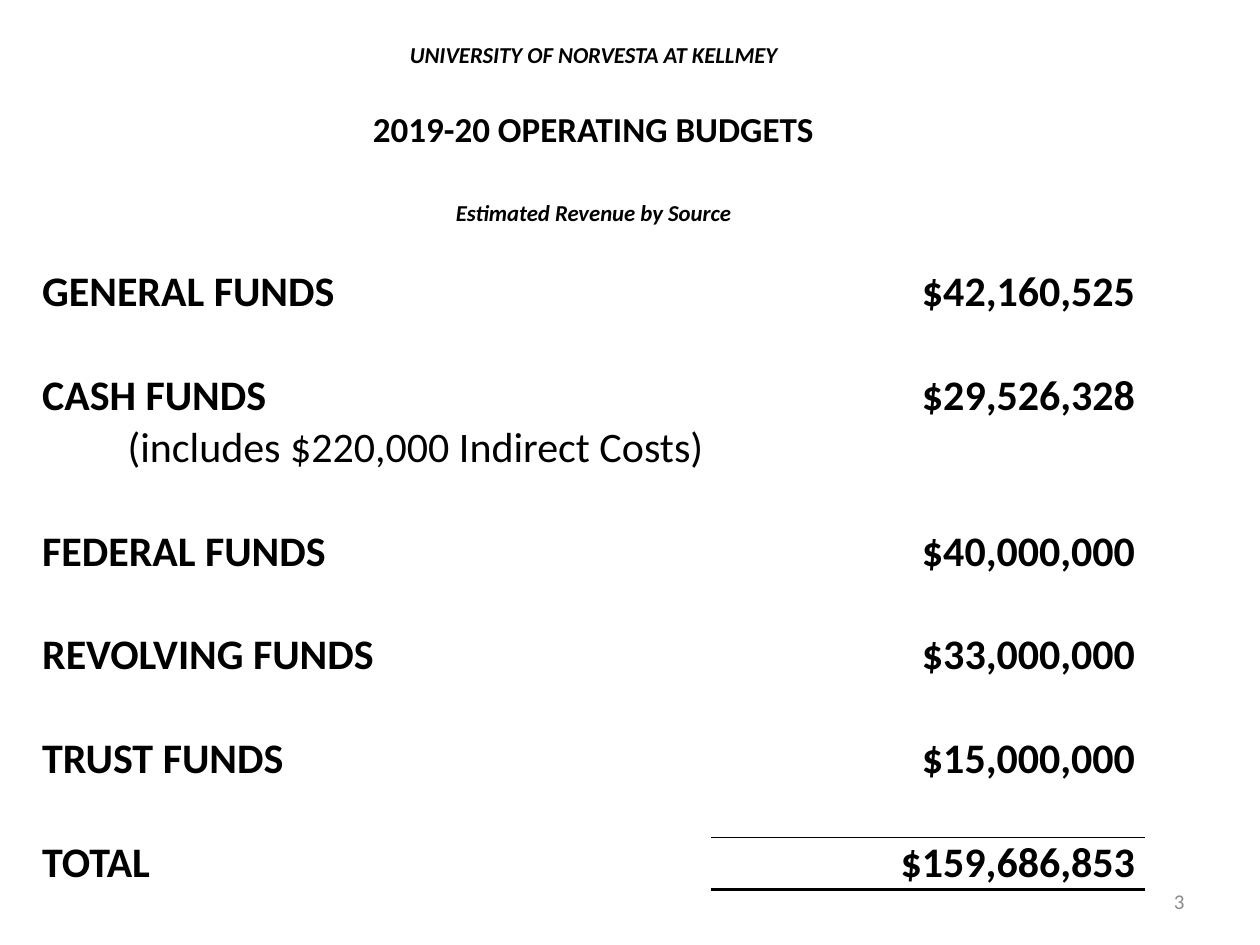
from dataclasses import dataclass

from lxml import etree
from pptx import Presentation
from pptx.dml.color import RGBColor
from pptx.enum.text import MSO_ANCHOR, PP_ALIGN
from pptx.oxml.ns import qn
from pptx.util import Pt

LEFT, CENTER, RIGHT = PP_ALIGN.LEFT, PP_ALIGN.CENTER, PP_ALIGN.RIGHT
BOTTOM, MIDDLE = MSO_ANCHOR.BOTTOM, MSO_ANCHOR.MIDDLE
BLANK_LAYOUT = 6
NO_STYLE = "{2D5ABB26-0587-4C30-8999-92F81FD0307C}"


@dataclass(frozen=True)
class Theme:
    font: str = "Calibri"
    ink: str = "000000"
    muted: str = "8C8C8C"
    heading: float = 20
    caption: float = 13
    body: float = 24
    number: float = 12
    empty: float = 10
    thin: float = 0.5
    thick: float = 2


THEME = Theme()

# Table geometry in points
TABLE_LEFT, TABLE_TOP = 24.1, 18
COLUMN_WIDTHS = [347, 35.3, 115.2, 132.5]
HEADER_HEIGHTS = [21.6, 21.6, 25.9, 21.6, 21.6, 21.6]
FUND_HEIGHT, LAST_HEIGHT = 29.7, 13.7
FUND_ROWS = 12
NOTE_INDENT, AMOUNT_INSET = 48.8, 5.4

# Row number -> content
HEADINGS = {
    0: ("UNIVERSITY OF NORVESTA AT KELLMEY", THEME.caption, True),
    2: ("2019-20 OPERATING BUDGETS", THEME.heading, False),
    4: ("Estimated Revenue by Source", THEME.caption, True),
}
FUNDS = {
    6: ("GENERAL FUNDS", "$42,160,525"),
    8: ("CASH FUNDS", "$29,526,328"),
    11: ("FEDERAL FUNDS", "$40,000,000"),
    13: ("REVOLVING FUNDS", "$33,000,000"),
    15: ("TRUST FUNDS", "$15,000,000"),
    17: ("TOTAL", "$159,686,853"),
}
NOTE_ROW, NOTE = 9, "(includes $220,000 Indirect Costs)"
TOTAL_ROW = 17


def set_attributes(target, values):
    for name, value in values.items():
        setattr(target, name, value)


def write(frame, text, size, align=LEFT, color=THEME.ink, bold=True, italic=False):
    para = frame.paragraphs[0]
    para.alignment = align
    span = para.add_run()
    span.text = text
    set_attributes(span.font, {"name": THEME.font, "size": Pt(size),
                               "bold": bold, "italic": italic})
    span.font.color.rgb = RGBColor.from_string(color)
    return para


def clear_cell(cell):
    """Remove fill and insets, and keep empty cells from stretching their row."""
    set_attributes(cell, {"margin_left": 0, "margin_right": 0, "margin_top": 0,
                          "margin_bottom": 0, "vertical_anchor": BOTTOM})
    cell.fill.background()
    end = etree.SubElement(cell.text_frame.paragraphs[0]._p, qn("a:endParaRPr"))
    end.set("sz", str(int(THEME.empty * 100)))


def add_border(cell, side, width):
    line = etree.Element(qn(f"a:ln{side}"), w=str(int(Pt(width))))
    fill = etree.SubElement(line, qn("a:solidFill"))
    etree.SubElement(fill, qn("a:srgbClr"), val=THEME.ink)
    properties = cell._tc.get_or_add_tcPr()
    position = len(properties.findall(qn("a:lnT")))
    properties.insert(position, line)


def add_budget_table(page):
    heights = HEADER_HEIGHTS + [FUND_HEIGHT] * FUND_ROWS + [LAST_HEIGHT]
    frame = page.shapes.add_table(
        len(heights), len(COLUMN_WIDTHS), Pt(TABLE_LEFT), Pt(TABLE_TOP),
        Pt(sum(COLUMN_WIDTHS)), Pt(sum(heights)))
    table = frame.table
    set_attributes(table, {"first_row": False, "horz_banding": False})
    table._tbl.tblPr.find(qn("a:tableStyleId")).text = NO_STYLE

    for column, width in zip(table.columns, COLUMN_WIDTHS):
        column.width = Pt(width)
    for row, height in zip(table.rows, heights):
        row.height = Pt(height)
    for cell in table.iter_cells():
        clear_cell(cell)

    # Headings span the table; every row below is a label and an amount
    spans = {row: [(0, 3)] for row in HEADINGS}
    spans.update({1: [(1, 3)], 3: [(0, 2)]})
    for row in range(len(heights)):
        for first, last in spans.get(row, [(0, 1), (2, 3)]):
            table.cell(row, first).merge(table.cell(row, last))
    return table


def fill_budget_table(table):
    for row, (text, size, italic) in HEADINGS.items():
        write(table.cell(row, 0).text_frame, text, size, CENTER, italic=italic)

    for row, (label, amount) in FUNDS.items():
        write(table.cell(row, 0).text_frame, label, THEME.body)
        amount_cell = table.cell(row, 2)
        amount_cell.margin_right = Pt(AMOUNT_INSET)
        write(amount_cell.text_frame, amount, THEME.body, RIGHT)

    # A paragraph indent leaves the column width alone
    note = write(table.cell(NOTE_ROW, 0).text_frame, NOTE, THEME.body, bold=False)
    properties = note._p.get_or_add_pPr()
    properties.set("marL", str(int(Pt(NOTE_INDENT))))
    properties.set("indent", "0")


def rule_total(table):
    """Thin line above the total and thick line below it."""
    for column in (2, 3):
        for row, side, width in ((TOTAL_ROW - 1, "B", THEME.thin),
                                 (TOTAL_ROW, "T", THEME.thin),
                                 (TOTAL_ROW, "B", THEME.thick),
                                 (TOTAL_ROW + 1, "T", THEME.thick)):
            add_border(table.cell(row, column), side, width)


def add_page_number(page, text):
    box = page.shapes.add_textbox(Pt(516), Pt(500.4), Pt(168), Pt(28.8))
    set_attributes(box.text_frame, {"word_wrap": True, "vertical_anchor": MIDDLE})
    write(box.text_frame, text, THEME.number, RIGHT, THEME.muted, bold=False)


def main():
    deck = Presentation()
    set_attributes(deck, {"slide_width": Pt(720), "slide_height": Pt(540)})
    page = deck.slides.add_slide(deck.slide_layouts[BLANK_LAYOUT])

    # Page number behind the budget table
    add_page_number(page, "3")

    # Revenue by source
    table = add_budget_table(page)
    fill_budget_table(table)
    rule_total(table)

    deck.save("out.pptx")


if __name__ == "__main__":
    main()
